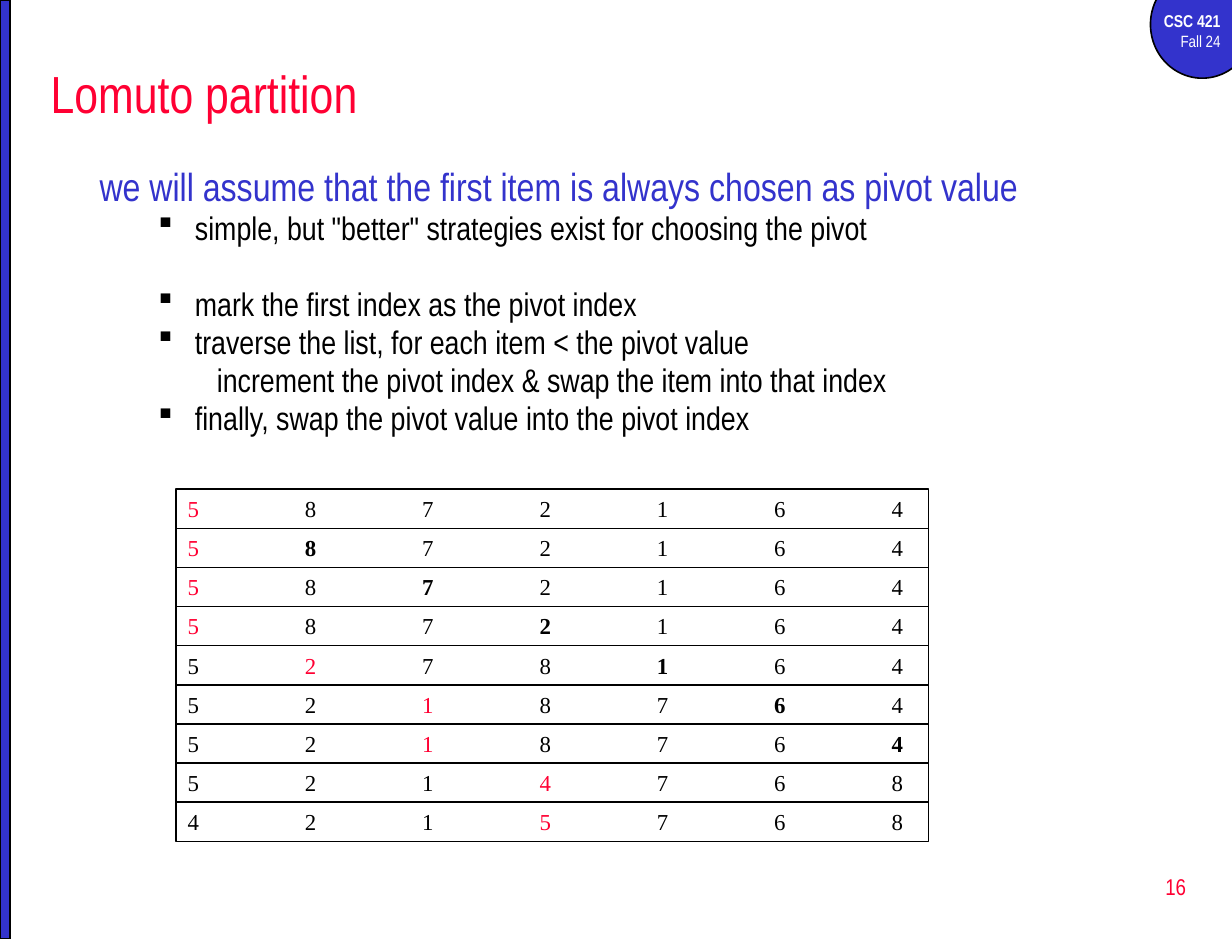
import pptx
import pptx.util
import pptx.dml.color
import pptx.enum.shapes
import pptx.enum.text
import pptx.oxml
import pptx.oxml.ns

Pt = pptx.util.Pt
RGBColor = pptx.dml.color.RGBColor
MSO_SHAPE = pptx.enum.shapes.MSO_SHAPE
PP_ALIGN = pptx.enum.text.PP_ALIGN
MSO_ANCHOR = pptx.enum.text.MSO_ANCHOR

BLUE = RGBColor(0x33, 0x33, 0xCC)
RED = RGBColor(0xFF, 0x00, 0x33)
BLACK = RGBColor(0, 0, 0)
WHITE = RGBColor(0xFF, 0xFF, 0xFF)
NARROW = "Arial Narrow"
SERIF = "Times New Roman"
SQUARE = "§"  # a small square in Wingdings

# text, size, colour, left margin, hanging indent, line spacing, space before, bullet
BODY = [
    ("we will assume that the first item is always chosen as pivot value",
     24, BLUE, 0, 0, 1, 5.8, None),
    ('simple, but "better" strategies exist for choosing the pivot',
     20, BLACK, 58.5, 22.5, 0.8, 3.6, SQUARE),
    ("mark the first index as the pivot index",
     20, BLACK, 58.5, 22.5, 0.8, 27.5, SQUARE),
    ("traverse the list, for each item < the pivot value",
     20, BLACK, 58.5, 22.5, 0.8, 4.2, SQUARE),
    ("increment the pivot index & swap the item into that index",
     20, BLACK, 72, 0, 0.8, 4.2, None),
    ("finally, swap the pivot value into the pivot index",
     20, BLACK, 58.5, 22.5, 0.8, 4.2, SQUARE),
]

# list contents, pivot index (red), index being visited (bold)
STEPS = [
    ("5872164", 0, None),
    ("5872164", 0, 1),
    ("5872164", 0, 2),
    ("5872164", 0, 3),
    ("5278164", 1, 4),
    ("5218764", 2, 5),
    ("5218764", 2, 6),
    ("5214768", 3, None),
    ("4215768", 3, None),
]


def add_run(p, text, size, color, font=NARROW, bold=False):
    r = p.add_run()
    r.text = text
    r.font.size = Pt(size)
    r.font.name = font
    r.font.bold = bold
    r.font.color.rgb = color


def add_outlined(s, kind, box, fill, width):
    sp = s.shapes.add_shape(kind, *map(Pt, box))
    sp.shadow.inherit = False
    if fill is None:
        sp.fill.background()
    else:
        sp.fill.solid()
        sp.fill.fore_color.rgb = fill
    sp.line.color.rgb = BLACK
    sp.line.width = Pt(width)
    return sp


def add_text_frame(s, box, anchor=MSO_ANCHOR.TOP, wrap=True):
    tf = s.shapes.add_textbox(*map(Pt, box)).text_frame
    tf.word_wrap = wrap
    tf.vertical_anchor = anchor
    return tf


def append_xml(p, tag, attributes, inner=""):
    ns = pptx.oxml.ns.nsdecls("a")
    p._p.get_or_add_pPr().append(pptx.oxml.parse_xml(
        f"<a:{tag} {ns} {attributes}>{inner}</a:{tag}>"))


def set_indent(p, margin, hanging, bullet):
    pPr = p._p.get_or_add_pPr()
    pPr.set("marL", str(Pt(margin)))
    pPr.set("indent", str(-Pt(hanging)))
    if bullet:
        append_xml(p, "buFont", 'typeface="Wingdings" charset="2"')
        append_xml(p, "buChar", f'char="{bullet}"')


def set_tabs(p, count, gap):
    stops = "".join(f'<a:tab pos="{Pt(gap * (i + 1))}" algn="l"/>'
                    for i in range(count))
    append_xml(p, "tabLst", "", stops)


def add_course_badge(s, box):
    left, top, width, height = box
    add_outlined(s, MSO_SHAPE.OVAL, box, BLUE, 1)
    tf = add_text_frame(s, (left - 10, top + 21, 60, 33))
    for i, (text, size, bold) in enumerate(
            [("CSC 421", 10.5, True), ("Fall 24", 10, False)]):
        p = tf.paragraphs[0] if i == 0 else tf.add_paragraph()
        p.alignment = PP_ALIGN.RIGHT
        add_run(p, text, size, WHITE, bold=bold)


def add_title(s, box):
    tf = add_text_frame(s, box, MSO_ANCHOR.MIDDLE)
    add_run(tf.paragraphs[0], "Lomuto partition", 32, RED)


def add_body(s, box):
    tf = add_text_frame(s, box)
    for i, (text, size, color, margin, hanging, spacing, before, bullet) in enumerate(BODY):
        p = tf.paragraphs[0] if i == 0 else tf.add_paragraph()
        p.line_spacing = spacing
        p.space_before = Pt(before)
        set_indent(p, margin, hanging, bullet)
        add_run(p, text, size, color)


def add_page_number(s, box):
    tf = add_text_frame(s, box, MSO_ANCHOR.MIDDLE, wrap=False)
    p = tf.paragraphs[0]
    p.alignment = PP_ALIGN.RIGHT
    add_run(p, "16", 14, RED)


def add_trace(s, box):
    left, top, width, height = box
    pitch = height / len(STEPS)
    for i, (items, pivot, visited) in enumerate(STEPS):
        sp = add_outlined(s, MSO_SHAPE.RECTANGLE,
                          (left, top + i * pitch, width, 24.2), None, 0.75)
        tf = sp.text_frame
        tf.word_wrap = True
        tf.vertical_anchor = MSO_ANCHOR.TOP
        p = tf.paragraphs[0]
        p.alignment = PP_ALIGN.LEFT
        set_tabs(p, len(items) - 1, 72)
        for j, item in enumerate(items):
            add_run(p, item if j == 0 else "\t" + item, 14,
                    RED if j == pivot else BLACK, SERIF, j == visited)


def main():
    prs = pptx.Presentation()
    prs.slide_width, prs.slide_height = Pt(756), Pt(576)
    s = prs.slides.add_slide(prs.slide_layouts[6])

    # Page frame
    add_course_badge(s, (706, -18, 63.5, 66))
    add_outlined(s, MSO_SHAPE.RECTANGLE, (0, 0, 6, 576), BLUE, 1)

    # Explanation
    add_title(s, (24, 30, 714, 54))
    add_body(s, (54, 96, 660, 66))
    add_page_number(s, (577.5, 525, 157.5, 38))

    # Step-by-step trace of the list
    add_trace(s, (108, 300, 462, 216))

    prs.save("out.pptx")


if __name__ == "__main__":
    main()
